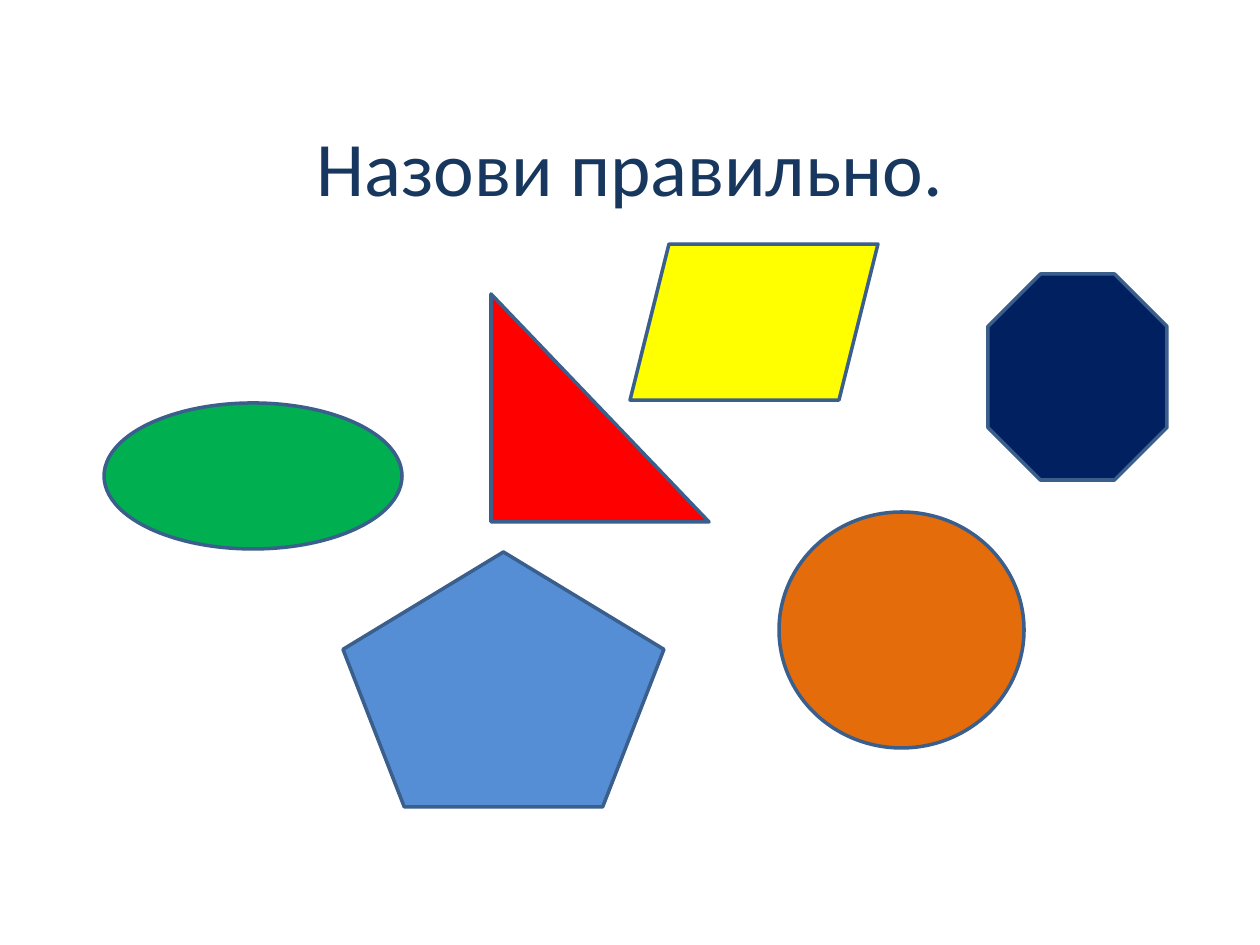
from pptx import Presentation
from pptx.dml.color import RGBColor
from pptx.enum.shapes import MSO_SHAPE as SHAPE
from pptx.enum.text import MSO_ANCHOR as ANCHOR, PP_ALIGN as ALIGN
from pptx.util import Pt

COLORS = {
    "title": "17375E",
    "outline": "3A5F8C",
    "red": "FF0000",
    "navy": "002060",
    "yellow": "FFFF00",
    "green": "00B050",
    "blue": "558ED5",
    "orange": "E46C0A",
}
TITLE = "Назови правильно."
TITLE_BOX = (63, 38, 1134, 256)
FIGURES = [
    (SHAPE.RIGHT_TRIANGLE, "red", (491, 294, 218, 228)),
    (SHAPE.OCTAGON, "navy", (988, 274, 179, 206)),
    (SHAPE.PARALLELOGRAM, "yellow", (630, 244, 248, 156)),
    (SHAPE.OVAL, "green", (104, 403, 298, 146)),
    (SHAPE.REGULAR_PENTAGON, "blue", (343, 552, 321, 255)),
    (SHAPE.OVAL, "orange", (779, 512, 245, 236)),
]
EMU_PER_PX = 914400 / 126


def px(n):
    return round(n * EMU_PER_PX)


def color(name):
    return RGBColor.from_string(COLORS[name])


def put_text(sp, text, size, fill, font="Calibri", align=ALIGN.CENTER, anchor=ANCHOR.MIDDLE):
    tf = sp.text_frame
    tf.word_wrap = True
    tf.vertical_anchor = anchor
    p = tf.paragraphs[0]
    p.alignment = align
    r = p.add_run()
    r.text = text
    r.font.name = font
    r.font.size = Pt(size)
    r.font.color.rgb = color(fill)


def add_figure(slide, kind, fill, box):
    sp = slide.shapes.add_shape(kind, *map(px, box))
    sp.shadow.inherit = False
    sp.fill.solid()
    sp.fill.fore_color.rgb = color(fill)
    sp.line.color.rgb = color("outline")
    sp.line.width = Pt(2)


def main():
    prs = Presentation()
    prs.slide_width, prs.slide_height = px(1260), px(945)
    slide = prs.slides.add_slide(prs.slide_layouts[5])
    title = slide.shapes.title
    title.left, title.top, title.width, title.height = map(px, TITLE_BOX)
    put_text(title, TITLE, size=44, fill="title")
    for kind, fill, box in FIGURES:
        add_figure(slide, kind, fill, box)
    prs.save("out.pptx")


if __name__ == "__main__":
    main()
